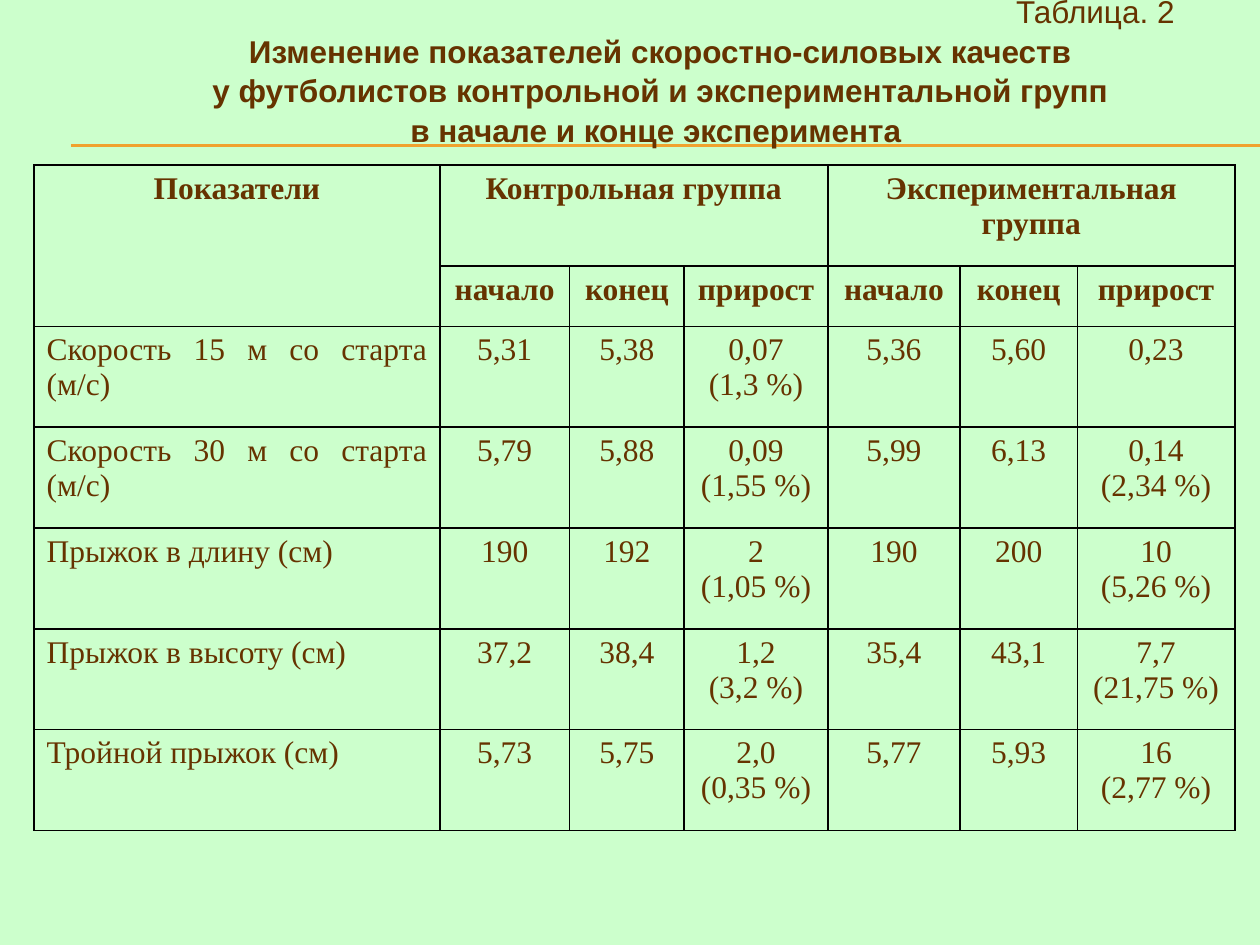
from dataclasses import dataclass

from lxml.etree import SubElement
from pptx import Presentation
from pptx.dml.color import RGBColor
from pptx.enum.shapes import MSO_CONNECTOR
from pptx.enum.text import MSO_ANCHOR, PP_ALIGN
from pptx.oxml.ns import qn
from pptx.util import Pt


@dataclass(frozen=True)
class Theme:
    """Colours, fonts and sizes of the slide."""
    background: str = "CCFFCC"
    ink: str = "663300"
    rule: str = "F0A22E"
    border: str = "010000"
    title_font: str = "Arial"
    table_font: str = "Times New Roman"
    text_size: int = 18
    rule_width: float = 0.75
    border_width: int = 1


THEME = Theme()

TABLE_LABEL = "Таблица. 2"
TITLE_LINES = [
    "Изменение показателей скоростно-силовых качеств",
    "у футболистов контрольной и экспериментальной групп",
    "в начале и конце эксперимента ",
]
GROUPS = ["Контрольная группа", "Экспериментальная группа"]
STAGES = ["начало", "конец", "прирост"]
RESULTS = [
    ["Скорость 15 м со старта (м/с)", "5,31", "5,38", "0,07\n(1,3 %)", "5,36", "5,60", "0,23"],
    ["Скорость 30 м со старта (м/с)", "5,79", "5,88", "0,09\n(1,55 %)", "5,99", "6,13", "0,14\n(2,34 %)"],
    ["Прыжок в длину (см)", "190", "192", "2\n(1,05 %)", "190", "200", "10\n(5,26 %)"],
    ["Прыжок в высоту (см)", "37,2", "38,4", "1,2\n(3,2 %)", "35,4", "43,1", "7,7\n(21,75 %)"],
    ["Тройной прыжок (см)", "5,73", "5,75", "2,0\n(0,35 %)", "5,77", "5,93", "16\n(2,77 %)"],
]
COLUMN_WIDTHS = [231.8, 74.2, 65.5, 82.1, 75.6, 67, 90]
HEADER_HEIGHTS = [57.6, 34.6]
RESULT_HEIGHT = 57.6


def write_line(paragraph, text, font, align, bold=False):
    """Put one styled run into a paragraph."""
    paragraph.alignment = align
    run = paragraph.add_run()
    run.text = text
    run.font.name = font
    run.font.size = Pt(THEME.text_size)
    run.font.bold = bold
    run.font.color.rgb = RGBColor.from_string(THEME.ink)


def add_rules(slide, left, top, right, gap):
    """Draw the double rule under the title."""
    for y in (top, top + gap):
        rule = slide.shapes.add_connector(
            MSO_CONNECTOR.STRAIGHT, Pt(left), Pt(y), Pt(right), Pt(y))
        rule.line.color.rgb = RGBColor.from_string(THEME.rule)
        rule.line.width = Pt(THEME.rule_width)
        SubElement(rule._element.spPr, qn("a:effectLst"))


def add_title(slide, left, top, width, height):
    """Write the table label and the title in the given box."""
    frame = slide.shapes.add_textbox(Pt(left), Pt(top), Pt(width), Pt(height)).text_frame
    frame.word_wrap = True
    frame.vertical_anchor = MSO_ANCHOR.MIDDLE
    write_line(frame.paragraphs[0], TABLE_LABEL, THEME.title_font, PP_ALIGN.RIGHT)
    for line in TITLE_LINES:
        paragraph = frame.add_paragraph()
        paragraph.line_spacing = 1.05
        write_line(paragraph, line, THEME.title_font, PP_ALIGN.CENTER, bold=True)


def add_borders(cell):
    """Outline all four sides of a cell."""
    properties = cell._tc.get_or_add_tcPr()
    for position, side in enumerate(("lnL", "lnR", "lnT", "lnB")):
        line = SubElement(properties, qn(f"a:{side}"), w=str(Pt(THEME.border_width)))
        fill = SubElement(line, qn("a:solidFill"))
        SubElement(fill, qn("a:srgbClr"), val=THEME.border)
        properties.insert(position, line)


def write_cell(cell, text, align=PP_ALIGN.CENTER, bold=False):
    """Write each line of the text as a paragraph of the cell."""
    for number, line in enumerate(text.split("\n")):
        frame = cell.text_frame
        paragraph = frame.add_paragraph() if number else frame.paragraphs[0]
        write_line(paragraph, line, THEME.table_font, align, bold)


def add_results(slide, left, top):
    """Build the results table with its two header rows."""
    heights = HEADER_HEIGHTS + [RESULT_HEIGHT] * len(RESULTS)
    table = slide.shapes.add_table(
        len(heights), len(COLUMN_WIDTHS), Pt(left), Pt(top),
        Pt(sum(COLUMN_WIDTHS)), Pt(sum(heights))).table
    table.first_row = table.horz_banding = False
    for column, width in zip(table.columns, COLUMN_WIDTHS):
        column.width = Pt(width)
    for row, height in zip(table.rows, heights):
        row.height = Pt(height)
    for cell in table.iter_cells():
        cell.fill.background()
        add_borders(cell)

    table.cell(0, 0).merge(table.cell(1, 0))
    write_cell(table.cell(0, 0), "Показатели", bold=True)
    for index, group in enumerate(GROUPS):
        first = 1 + index * len(STAGES)
        table.cell(0, first).merge(table.cell(0, first + len(STAGES) - 1))
        write_cell(table.cell(0, first), group, bold=True)
        for offset, stage in enumerate(STAGES):
            write_cell(table.cell(1, first + offset), stage, bold=True)

    for row, (measure, *values) in enumerate(RESULTS, len(HEADER_HEIGHTS)):
        write_cell(table.cell(row, 0), measure, PP_ALIGN.JUSTIFY)
        for column, value in enumerate(values, 1):
            write_cell(table.cell(row, column), value)


def main():
    """Build and save the slide."""
    deck = Presentation()
    deck.slide_width, deck.slide_height = Pt(720), Pt(540)
    slide = deck.slides.add_slide(deck.slide_layouts[6])
    slide.background.fill.solid()
    slide.background.fill.fore_color.rgb = RGBColor.from_string(THEME.background)
    add_rules(slide, left=40.5, top=82.8, right=720, gap=0.6)
    add_title(slide, left=76.3, top=-6.5, width=602, height=93.6)
    add_results(slide, left=19.5, top=94.3)
    deck.save("out.pptx")


if __name__ == "__main__":
    main()
